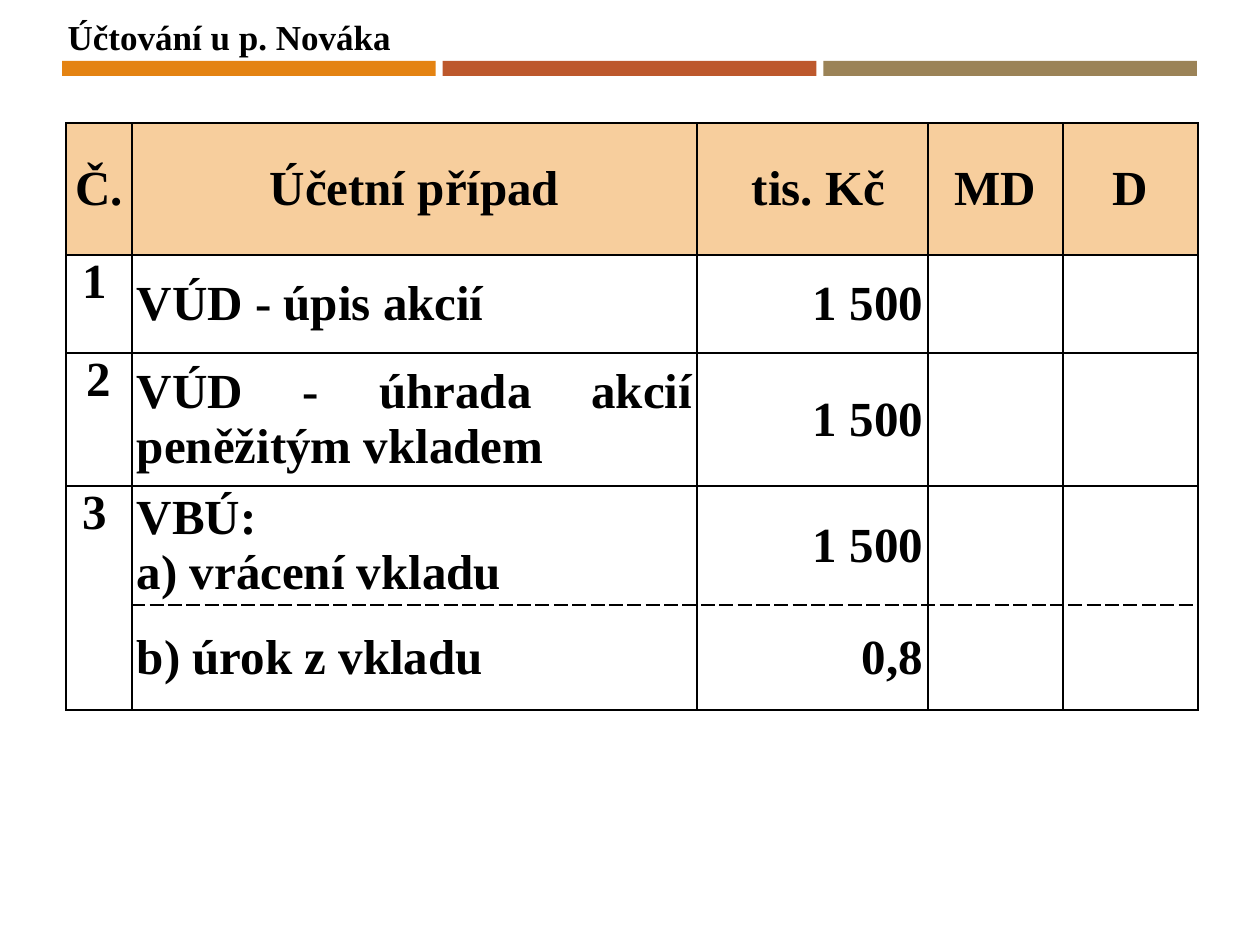
from lxml import etree
from pptx import Presentation
from pptx import util as u
from pptx.dml.color import RGBColor
from pptx.enum import shapes, text
from pptx.oxml import ns

SCALE = 914400 / 126
FONT = "Times New Roman"
BLACK = "000000"
HEADER_FILL = "F7CE9D"
BAR_COLORS = ["E48312", "BD582C", "9B8357"]
COLUMNS = [66, 565, 231, 135, 135]
ROWS = [132, 98, 133, 119, 105]
ALIGN = text.PP_ALIGN
ENTRIES = [
    ["Č.", "Účetní případ", "tis. Kč", "MD", "D"],
    ["1", "VÚD - úpis akcií", "1 500", "", ""],
    ["2", "VÚD - úhrada akcií peněžitým vkladem", "1 500", "", ""],
    ["3", "VBÚ:\na) vrácení vkladu", "1 500", "", ""],
    ["", "b) úrok z vkladu", "0,8", "", ""],
]
BODY_ALIGN = [ALIGN.LEFT, ALIGN.JUSTIFY, ALIGN.RIGHT, ALIGN.CENTER, ALIGN.CENTER]


def px(value):
    return u.Emu(round(value * SCALE))


def color(value):
    return RGBColor.from_string(value)


def apply(target, values):
    for name, value in values.items():
        setattr(target, name, value)


def format_text(frame, size, alignment):
    for paragraph in frame.paragraphs:
        paragraph.alignment = alignment
        apply(paragraph.font, {"name": FONT, "size": u.Pt(size), "bold": True})
        paragraph.font.color.rgb = color(BLACK)


def add_title(slide, left, top, width, height):
    title = slide.shapes.title
    apply(title, {"left": px(left), "top": px(top), "width": px(width), "height": px(height)})
    frame = title.text_frame
    frame.text = "Účtování u p. Nováka"
    apply(frame, {
        "word_wrap": False,
        "auto_size": text.MSO_AUTO_SIZE.SHAPE_TO_FIT_TEXT,
        "vertical_anchor": text.MSO_ANCHOR.TOP,
    })
    format_text(frame, 20, ALIGN.LEFT)


def add_bars(slide, left, top, width, height, gap):
    bar_width = (width - gap * (len(BAR_COLORS) - 1)) / len(BAR_COLORS)
    for index, fill in enumerate(BAR_COLORS):
        bar_left = left + index * (bar_width + gap)
        bar = slide.shapes.add_shape(
            shapes.MSO_SHAPE.RECTANGLE, px(bar_left), px(top), px(bar_width), px(height))
        bar.shadow.inherit = False
        bar.fill.solid()
        bar.fill.fore_color.rgb = color(fill)
        bar.line.fill.background()


def add_borders(cell, dashed_side):
    properties = cell._tc.get_or_add_tcPr()
    for index, side in enumerate(["lnL", "lnR", "lnT", "lnB"]):
        line = etree.Element(ns.qn(f"a:{side}"), w=str(u.Pt(1)))
        fill = etree.SubElement(line, ns.qn("a:solidFill"))
        etree.SubElement(fill, ns.qn("a:srgbClr"), val=BLACK)
        dash = "dash" if side == dashed_side else "solid"
        etree.SubElement(line, ns.qn("a:prstDash"), val=dash)
        properties.insert(index, line)


def format_cell(cell, row, column):
    is_header = row == 0
    is_number = column == 0 and not is_header
    is_indented = (row, column) in [(0, 2), (1, 0), (3, 0)]
    alignment = ALIGN.CENTER if is_header or (row, column) == (2, 0) else BODY_ALIGN[column]
    cell.text = ENTRIES[row][column]
    apply(cell, {
        "margin_left": px(17 if is_indented else 5),
        "margin_right": px(5),
        "margin_top": 0,
        "margin_bottom": 0,
        "vertical_anchor": text.MSO_ANCHOR.TOP if is_number else text.MSO_ANCHOR.MIDDLE,
    })
    format_text(cell.text_frame, 28, alignment)
    if is_header:
        cell.fill.solid()
        cell.fill.fore_color.rgb = color(HEADER_FILL)
    else:
        cell.fill.background()
    dashed_side = {3: "lnB", 4: "lnT"}.get(row) if column else None
    add_borders(cell, dashed_side)


def add_ledger(slide, left, top):
    frame = slide.shapes.add_table(
        len(ROWS), len(COLUMNS), px(left), px(top), px(sum(COLUMNS)), px(sum(ROWS)))
    table = frame.table
    apply(table, {"first_row": False, "horz_banding": False})
    for column, width in zip(table.columns, COLUMNS):
        column.width = px(width)
    for row, height in zip(table.rows, ROWS):
        row.height = px(height)
    for row in range(len(ROWS)):
        for column in range(len(COLUMNS)):
            format_cell(table.cell(row, column), row, column)
    table.cell(3, 0).merge(table.cell(4, 0))


def main():
    presentation = Presentation()
    apply(presentation, {"slide_width": px(1260), "slide_height": px(945)})
    slide = presentation.slides.add_slide(presentation.slide_layouts[5])
    add_bars(slide, 62, 61, 1135, 15, 7)
    add_ledger(slide, 66, 123)
    add_title(slide, 55, 9, 352, 55)
    presentation.save("out.pptx")


if __name__ == "__main__":
    main()
